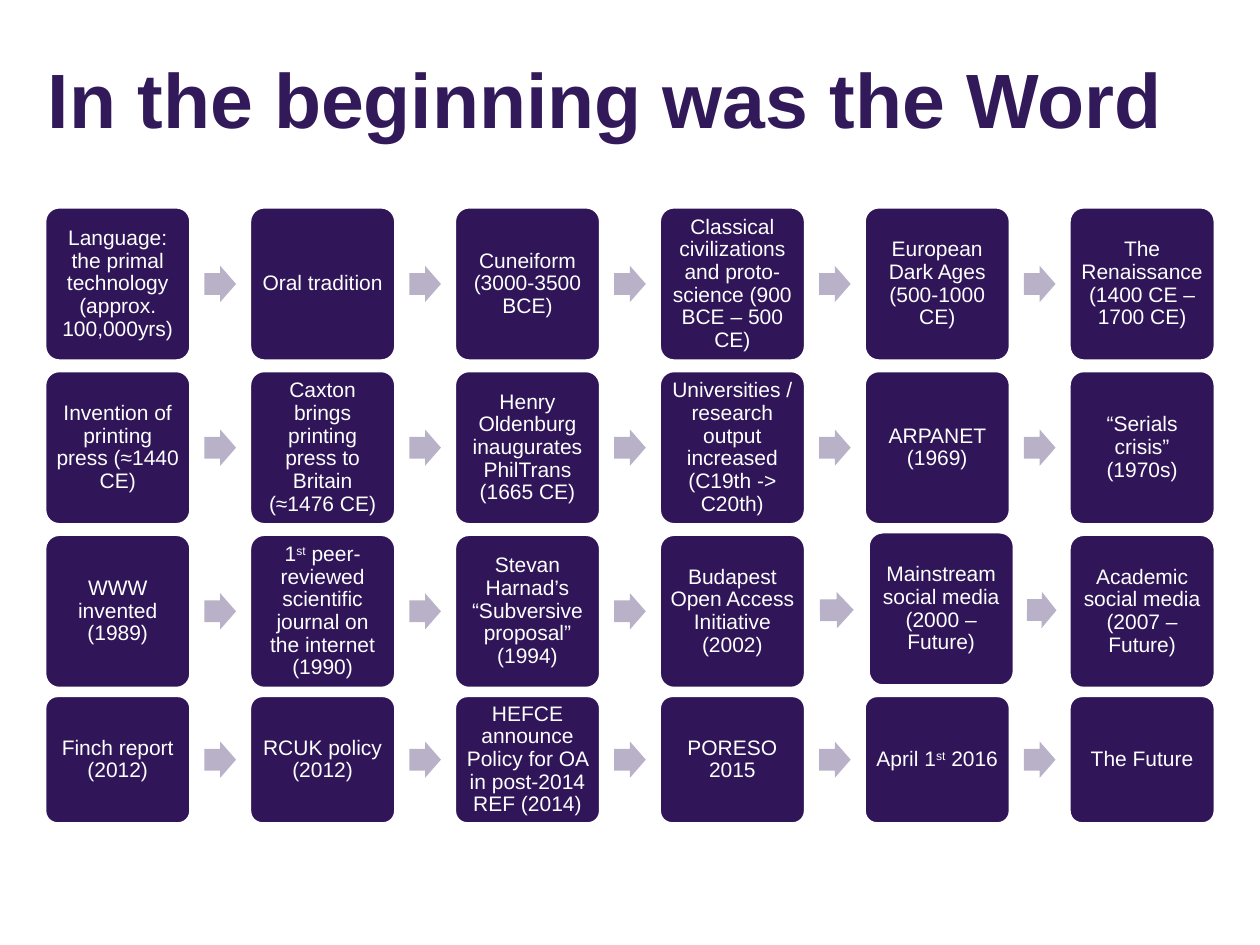
from math import atan2, degrees
from pptx import Presentation
from pptx import util as u
from pptx.dml.color import RGBColor
from pptx.enum import shapes, text

HUES = {"title": "321959", "box": "301659", "arrow": "B9B1C7", "white": "FFFFFF"}
FONT = "Arial"
WIDE, PITCH = 2.95, 4.13
NUDGE = {(2, 4): (0.08, -0.05)}

ROWS = [
    (4.17, 3.11, [
        "Language: the primal technology (approx. 100,000yrs)",
        "Oral tradition",
        "Cuneiform (3000-3500 BCE)",
        "Classical civilizations and proto-science (900 BCE – 500 CE)",
        "European Dark Ages (500-1000 CE)",
        "The Renaissance (1400 CE – 1700 CE)",
    ]),
    (7.47, 3.11, [
        "Invention of printing press (≈1440 CE)",
        "Caxton brings printing press to Britain (≈1476 CE)",
        "Henry Oldenburg inaugurates PhilTrans (1665 CE)",
        "Universities / research output increased (C19th -> C20th)",
        "ARPANET (1969)",
        "“Serials crisis” (1970s)",
    ]),
    (10.77, 3.11, [
        "WWW invented (1989)",
        "1^st^ peer-reviewed scientific journal on the internet (1990)",
        "Stevan Harnad’s “Subversive proposal” (1994)",
        "Budapest Open Access Initiative (2002)",
        "Mainstream social media (2000 – Future)",
        "Academic social media (2007 – Future)",
    ]),
    (14.02, 2.59, [
        "Finch report (2012)",
        "RCUK policy (2012)",
        "HEFCE announce Policy for OA in post-2014 REF (2014)",
        "PORESO 2015",
        "April 1^st^ 2016",
        "The Future",
    ]),
]


def hue(name):
    return RGBColor.from_string(HUES[name])


def style(font, size, name):
    font.name, font.size = FONT, u.Pt(size)
    font.color.rgb = hue(name)


def add_shape(slide, kind, box, fill):
    shape = slide.shapes.add_shape(kind, *map(u.Cm, box))
    shape.shadow.inherit = False
    shape.fill.solid()
    shape.fill.fore_color.rgb = hue(fill)
    return shape


def add_title(slide, box, words):
    title = slide.shapes.title
    title.left, title.top, title.width, title.height = map(u.Cm, box)
    frame = title.text_frame
    frame.text = words
    frame.auto_size = text.MSO_AUTO_SIZE.NONE
    frame.vertical_anchor = text.MSO_ANCHOR.TOP
    frame.margin_top = u.Cm(0.28)
    par = frame.paragraphs[0]
    par.alignment = text.PP_ALIGN.LEFT
    style(par.font, 44, "title")
    par.font.bold = True


def add_step(slide, box, words):
    step = add_shape(slide, shapes.MSO_SHAPE.ROUNDED_RECTANGLE, box, "box")
    step.adjustments[0] = 0.1
    step.line.color.rgb = hue("white")
    step.line.width = u.Pt(2)
    frame = step.text_frame
    frame.word_wrap = True
    frame.vertical_anchor = text.MSO_ANCHOR.MIDDLE
    frame.margin_left = frame.margin_right = u.Cm(0.13)
    frame.margin_top = frame.margin_bottom = u.Cm(0.13)
    par = frame.paragraphs[0]
    par.alignment = text.PP_ALIGN.CENTER
    par.line_spacing = 0.9
    par.space_after = u.Pt(4.2)
    style(par.font, 12, "white")
    for i, part in enumerate(words.split("^")):
        run = par.add_run()
        run.text = part
        if i % 2:
            run._r.get_or_add_rPr().set("baseline", "30000")


def add_arrow(slide, start, end):
    x1, y1, wide, high = start
    x2, y2 = end[:2]
    long, tall = 0.54 * (x2 - x1 - wide), 0.73
    mid_x, mid_y = (x1 + wide + x2) / 2, (y1 + y2 + high) / 2
    box = (mid_x - long / 2, mid_y - tall / 2, long, tall)
    arrow = add_shape(slide, shapes.MSO_SHAPE.RIGHT_ARROW, box, "arrow")
    arrow.adjustments[0], arrow.adjustments[1] = 0.6, 0.5
    arrow.line.fill.background()
    arrow.rotation = degrees(atan2(y2 - y1, x2 - x1))


def add_row(slide, row, left, top, high, steps):
    last = None
    for col, words in enumerate(steps):
        dx, dy = NUDGE.get((row, col), (0, 0))
        box = (left + col * PITCH + dx, top + dy, WIDE, high)
        if last:
            add_arrow(slide, last, box)
        add_step(slide, box, words)
        last = box


def main():
    deck = Presentation()
    deck.slide_width, deck.slide_height = u.Cm(25.4), u.Cm(19.05)
    slide = deck.slides.add_slide(deck.slide_layouts[5])
    add_title(slide, (0.71, 0.76, 23.42, 3.18), "In the beginning was the Word")
    for row, (top, high, steps) in enumerate(ROWS):
        add_row(slide, row, 0.9, top, high, steps)
    deck.save("out.pptx")


if __name__ == "__main__":
    main()
